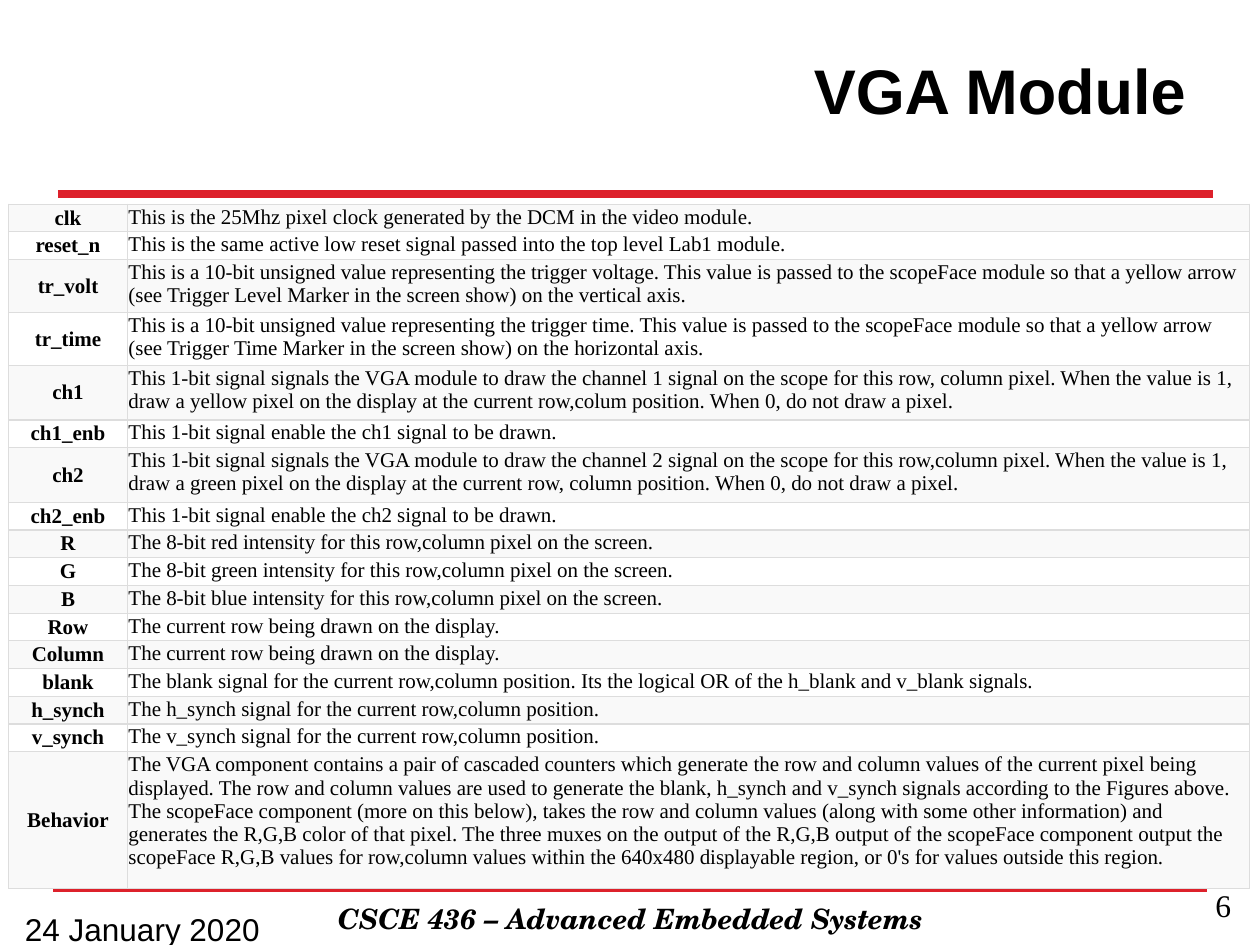
from lxml.etree import SubElement
from pptx import Presentation
from pptx.dml.color import RGBColor
from pptx.enum.shapes import MSO_CONNECTOR
from pptx.enum.text import MSO_ANCHOR, PP_ALIGN
from pptx.oxml.ns import qn
from pptx.util import Inches, Pt

BLACK = RGBColor(0x00, 0x00, 0x00)
RED = RGBColor(0xDD, 0x21, 0x2B)
GRAY = RGBColor(0xDD, 0xDD, 0xDD)
BANDS = [RGBColor(0xF9, 0xF9, 0xF9), RGBColor(0xFF, 0xFF, 0xFF)]

deck = Presentation()
deck.slide_width, deck.slide_height = Inches(10), Inches(7.5)
COL, ROW = deck.slide_width / 100, deck.slide_height / 100
slide = deck.slides.add_slide(deck.slide_layouts[6])


def style(paragraph, font_name, size, align, bold=False, italic=False):
    paragraph.alignment = align
    font = paragraph.font
    font.name, font.size = font_name, Pt(size)
    font.bold, font.italic = bold, italic
    font.color.rgb = BLACK


def add_label(text, left, top, width, height, anchor, *look):
    box = slide.shapes.add_textbox(
        int(left * COL), int(top * ROW), int(width * COL), int(height * ROW))
    frame = box.text_frame
    frame.word_wrap = True
    frame.vertical_anchor = anchor
    frame.text = text
    style(frame.paragraphs[0], *look)


for left, right, level in [(4.2, 95.8, 94), (4.6, 96.3, 20.5)]:
    rule = slide.shapes.add_connector(
        MSO_CONNECTOR.STRAIGHT,
        int(left * COL), int(level * ROW), int(right * COL), int(level * ROW))
    rule.line.color.rgb = RED
    rule.line.width = Pt(4.5)
    SubElement(rule._element.spPr, qn("a:effectLst"))

add_label("CSCE 436 – Advanced Embedded Systems", 14.2, 94.7, 71.7, 4.9,
          MSO_ANCHOR.TOP, "TeX Gyre Schola", 16, PP_ALIGN.CENTER, True, True)
add_label("VGA Module", 20.9, 1.1, 74.2, 16.7,
          MSO_ANCHOR.MIDDLE, "Arial", 36, PP_ALIGN.RIGHT, True)

ONE_LINE, TWO_LINES, TWO_LINES_LOOSE, BEHAVIOR = 2.9, 5.24, 5.77, 14.45
signals = [
    ("clk", ONE_LINE, "This is the 25Mhz pixel clock generated by the DCM in the video module."),
    ("reset_n", ONE_LINE, "This is the same active low reset signal passed into the top level Lab1 module."),
    ("tr_volt", TWO_LINES,
     "This is a 10-bit unsigned value representing the trigger voltage. This value is passed to the "
     "scopeFace module so that a yellow arrow (see Trigger Level Marker in the screen show) on the vertical axis."),
    ("tr_time", TWO_LINES,
     "This is a 10-bit unsigned value representing the trigger time. This value is passed to the "
     "scopeFace module so that a yellow arrow (see Trigger Time Marker in the screen show) on the horizontal axis."),
    ("ch1", TWO_LINES_LOOSE,
     "This 1-bit signal signals the VGA module to draw the channel 1 signal on the scope for this row, column "
     "pixel. When the value is 1, draw a yellow pixel on the display at the current row,colum position. "
     "When 0, do not draw a pixel."),
    ("ch1_enb", ONE_LINE, "This 1-bit signal enable the ch1 signal to be drawn."),
    ("ch2", TWO_LINES_LOOSE,
     "This 1-bit signal signals the VGA module to draw the channel 2 signal on the scope for this row,column "
     "pixel. When the value is 1, draw a green pixel on the display at the current row, column position. "
     "When 0, do not draw a pixel."),
    ("ch2_enb", ONE_LINE, "This 1-bit signal enable the ch2 signal to be drawn."),
    ("R", ONE_LINE, "The 8-bit red intensity for this row,column pixel on the screen."),
    ("G", ONE_LINE, "The 8-bit green intensity for this row,column pixel on the screen."),
    ("B", ONE_LINE, "The 8-bit blue intensity for this row,column pixel on the screen."),
    ("Row", ONE_LINE, "The current row being drawn on the display."),
    ("Column", ONE_LINE, "The current row being drawn on the display."),
    ("blank", ONE_LINE,
     "The blank signal for the current row,column position. Its the logical OR of the h_blank and v_blank signals."),
    ("h_synch", ONE_LINE, "The h_synch signal for the current row,column position."),
    ("v_synch", ONE_LINE, "The v_synch signal for the current row,column position."),
    ("Behavior", BEHAVIOR,
     "The VGA component contains a pair of cascaded counters which generate the row and column values of the "
     "current pixel being displayed. The row and column values are used to generate the blank, h_synch and "
     "v_synch signals according to the Figures above. The scopeFace component (more on this below), takes the "
     "row and column values (along with some other information) and generates the R,G,B color of that pixel. "
     "The three muxes on the output of the R,G,B output of the scopeFace component output the scopeFace R,G,B "
     "values for row,column values within the 640x480 displayable region, or 0's for values outside this region."),
]
table_height = sum(height for _, height, _ in signals)
table = slide.shapes.add_table(
    len(signals), 2, int(0.7 * COL), int(21.6 * ROW),
    int(98.5 * COL), int(table_height * ROW)).table
table.first_row = table.horz_banding = False
for column, width in zip(table.columns, (9.4, 89.1)):
    column.width = int(width * COL)

for number, (signal, height, description) in enumerate(signals):
    table.rows[number].height = int(height * ROW)
    for cell, text, anchor, align, bold in zip(
            table.rows[number].cells, (signal, description),
            (MSO_ANCHOR.MIDDLE, MSO_ANCHOR.TOP),
            (PP_ALIGN.CENTER, PP_ALIGN.LEFT), (True, False)):
        cell.text = text
        cell.vertical_anchor = anchor
        cell.margin_left = cell.margin_right = int(0.1 * COL)
        cell.margin_top = cell.margin_bottom = int(0.1 * COL)
        style(cell.text_frame.paragraphs[0], "Times New Roman", 12, align, bold)
        properties = cell._tc.get_or_add_tcPr()
        for side in ("a:lnL", "a:lnR", "a:lnT", "a:lnB"):
            border = SubElement(properties, qn(side), w=str(Pt(0.75)))
            SubElement(SubElement(border, qn("a:solidFill")), qn("a:srgbClr"), val=str(GRAY))
        cell.fill.solid()
        cell.fill.fore_color.rgb = BANDS[number % 2]

add_label("6", 75.4, 93.1, 23.3, 6.9,
          MSO_ANCHOR.TOP, "Times New Roman", 18, PP_ALIGN.RIGHT)
add_label("24 January 2020", 1, 95.6, 23.3, 4.4,
          MSO_ANCHOR.TOP, "Arial", 18, PP_ALIGN.LEFT)

deck.save("out.pptx")
